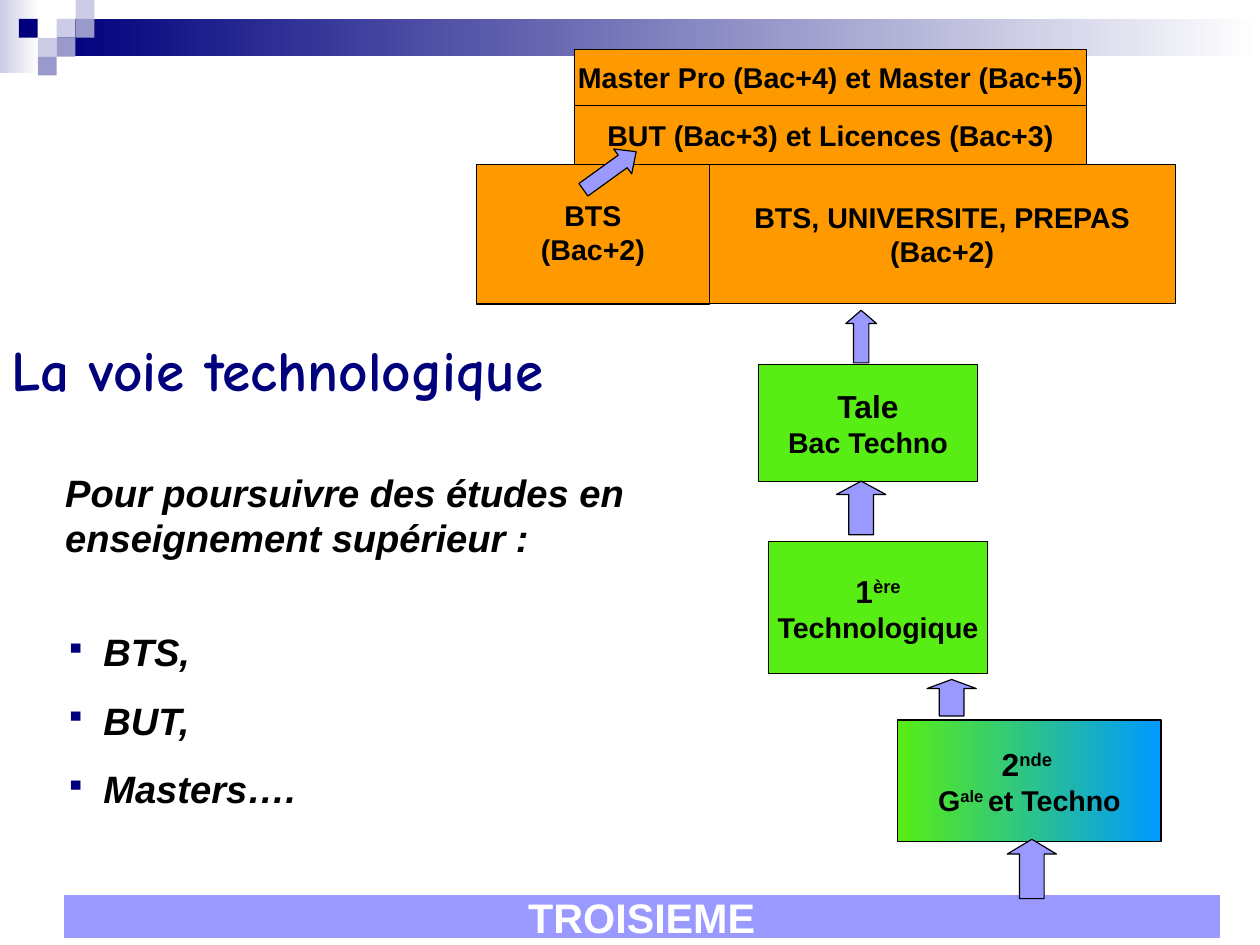
import pptx
import pptx.util
import pptx.dml.color
import pptx.enum.shapes
import pptx.enum.text
import pptx.oxml.ns
from lxml import etree

Pt = pptx.util.Pt
SHAPES = pptx.enum.shapes.MSO_SHAPE
CENTER = pptx.enum.text.PP_ALIGN.CENTER
MIDDLE = pptx.enum.text.MSO_ANCHOR.MIDDLE
NAVY, LILAC, BLACK, WHITE = "00007D", "9999FF", "000000", "FFFFFF"
PALE, MAUVE, GREEN, ORANGE = "CCCCE6", "9999CC", "58ED15", "FF9900"


def add_filled(kind, bounds, colours, line=None):
    """Add a shape; two colours make a gradient from left to right."""
    shape = page.shapes.add_shape(kind, *[Pt(value) for value in bounds])
    shape.shadow.inherit = False
    if len(colours) == 2:
        shape.fill.gradient()
        shape.fill.gradient_angle = 0
        for stop, colour in zip(shape.fill.gradient_stops, colours):
            stop.color.rgb = pptx.dml.color.RGBColor.from_string(colour)
    else:
        shape.fill.solid()
        shape.fill.fore_color.rgb = pptx.dml.color.RGBColor.from_string(colours[0])
    if line:
        shape.line.color.rgb = pptx.dml.color.RGBColor.from_string(line)
        shape.line.width = Pt(0.75)
    else:
        shape.line.fill.background()
    return shape


def add_span(para, text, colour, **formats):
    span = para.add_run()
    span.text = text
    span.font.color.rgb = pptx.dml.color.RGBColor.from_string(colour)
    for name, value in formats.items():
        setattr(span.font, name, value)
    return span


deck = pptx.Presentation()
deck.slide_width, deck.slide_height = Pt(793.7), Pt(595.28)
page = deck.slides.add_slide(deck.slide_layouts[6])

# Header band and its mosaic of squares
add_filled(SHAPES.RECTANGLE, (0, 0, 24.5, 46), [PALE, WHITE])
add_filled(SHAPES.RECTANGLE, (36, 11.9, 757.7, 23.5), [NAVY, WHITE])
tile = 11.9
mosaic = [(3, 1, PALE), (4, 0, PALE), (4, 1, MAUVE), (2, 2, PALE),
          (1, 1, NAVY), (3, 2, MAUVE), (2, 3, MAUVE)]
for column, row, colour in mosaic:
    add_filled(SHAPES.RECTANGLE, (column * tile, row * tile, tile, tile), [colour])

# School levels: bounds, fill, line, text colour, lines of (size, text);
# every second part between bars is superscript
levels = [
    ((40.5, 564.2, 727.7, 26.6), [LILAC], LILAC, WHITE, [(26, "TROISIEME")]),
    ((565.6, 453.6, 165.8, 76.3), [GREEN, "0099FF"], BLACK, BLACK,
     [(20, "2|nde "), (18, "G|ale |et Techno")]),
    ((484.3, 341.3, 137.7, 82.8), [GREEN], BLACK, BLACK,
     [(20, "1|ère"), (18, "Technologique")]),
    ((478, 229.6, 137.6, 73.5), [GREEN], BLACK, BLACK,
     [(20, "Tale"), (18, "Bac Techno")]),
    ((300.3, 103.7, 146.5, 87.8), [ORANGE], BLACK, BLACK,
     [(18, "BTS"), (18, "(Bac+2)")]),
    ((446.8, 103.7, 293.5, 87.5), [ORANGE], BLACK, BLACK,
     [(18, "BTS, UNIVERSITE, PREPAS"), (18, "(Bac+2)")]),
    ((361.9, 66.3, 322.5, 37.4), [ORANGE], BLACK, BLACK,
     [(18, "BUT (Bac+3) et Licences (Bac+3)")]),
    ((361.9, 31, 322.5, 35.3), [ORANGE], BLACK, BLACK,
     [(18, "Master Pro (Bac+4) et Master (Bac+5)")]),
]
for bounds, colours, line, text_colour, lines in levels:
    frame = add_filled(SHAPES.RECTANGLE, bounds, colours, line).text_frame
    frame.word_wrap = False
    frame.vertical_anchor = MIDDLE
    frame.margin_left = frame.margin_right = Pt(8)
    frame.margin_top = frame.margin_bottom = Pt(4)
    if lines[0][1] == "BTS":
        frame.margin_bottom = Pt(6.4)
    for index, (size, text) in enumerate(lines):
        para = frame.add_paragraph() if index else frame.paragraphs[0]
        para.alignment = CENTER
        for position, part in enumerate(text.split("|")):
            span = add_span(para, part, text_colour, name="Arial", size=Pt(size), bold=True)
            if position % 2:
                span._r.get_or_add_rPr().set("baseline", "30000")

# Arrows: centre, top, width, height, head length, rotation
arrows = [
    (542.5, 303.1, 31, 33.8, 0.27, 0),
    (384.1, 87.1, 19.4, 41, 0.54, 54.2),
    (542.5, 195.5, 19.4, 33.1, 0.43, 0),
    (599.5, 428, 31, 23, 0.25, 0),
    (650, 528.7, 31, 37.4, 0.3, 0),
]
for centre, top, width, height, head, rotation in arrows:
    arrow = add_filled(SHAPES.UP_ARROW, (centre - width / 2, top, width, height), [LILAC], BLACK)
    arrow.adjustments[0], arrow.adjustments[1] = 0.5, head
    arrow.rotation = rotation

# Title and list of studies
title = page.shapes.add_textbox(0, Pt(207), Pt(419.8), Pt(50.4)).text_frame
title.word_wrap = True
add_span(title.paragraphs[0], "La voie technologique", NAVY,
         name="Comic Neue", size=Pt(36), bold=True)

studies = page.shapes.add_textbox(Pt(34), Pt(292), Pt(453.6), Pt(223.2)).text_frame
studies.word_wrap = True
study_format = {"name": "Arial", "size": Pt(24), "bold": True, "italic": True}
add_span(studies.paragraphs[0], "Pour poursuivre des études en enseignement supérieur :",
         BLACK, **study_format)
for index, study in enumerate(["BTS,", "BUT,", "Masters…."]):
    para = studies.add_paragraph()
    para.line_spacing = 1.5
    para.space_before = Pt(0 if index else 28.5)
    add_span(para, study, BLACK, **study_format)
    properties = para._p.get_or_add_pPr()
    properties.set("marL", str(Pt(24)))
    properties.set("indent", str(Pt(-24)))
    bullet_colour = etree.SubElement(properties, pptx.oxml.ns.qn("a:buClr"))
    etree.SubElement(bullet_colour, pptx.oxml.ns.qn("a:srgbClr")).set("val", NAVY)
    etree.SubElement(properties, pptx.oxml.ns.qn("a:buSzPct")).set("val", "75000")
    etree.SubElement(properties, pptx.oxml.ns.qn("a:buChar")).set("char", "▪")

deck.save("out.pptx")
